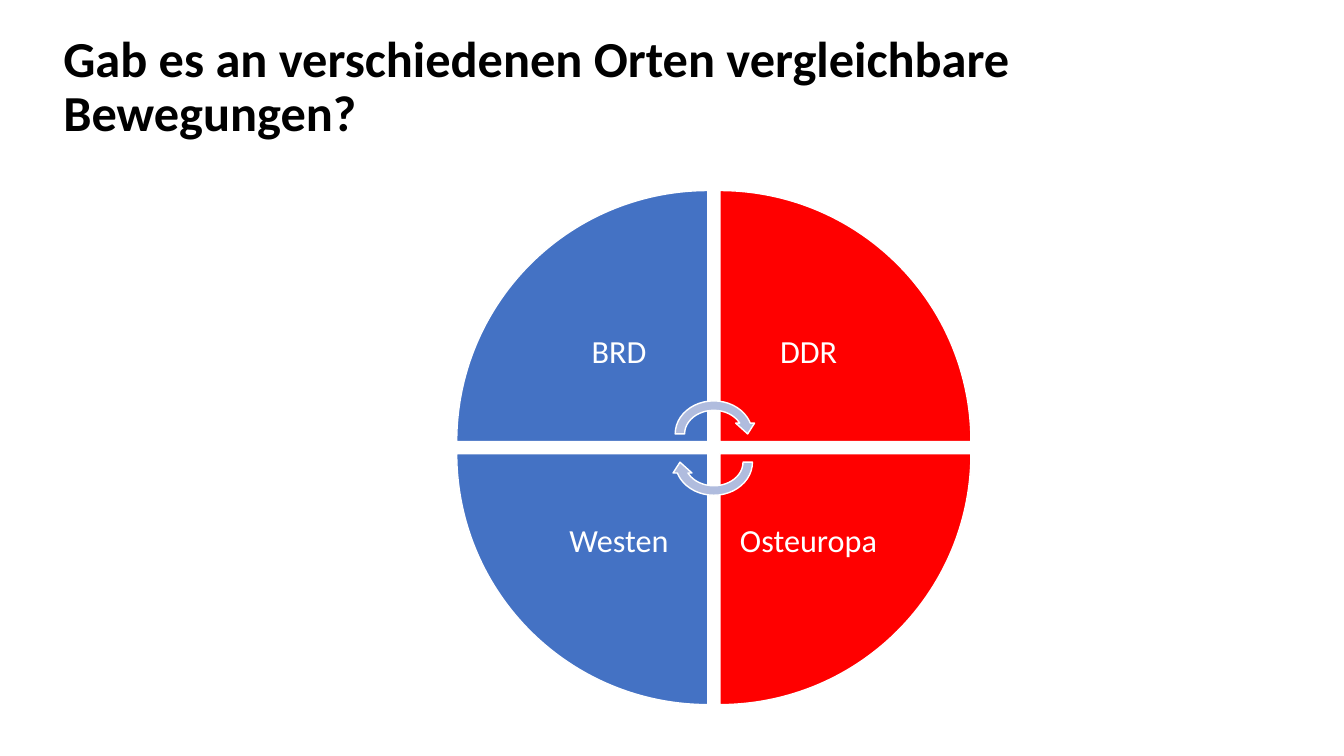
from dataclasses import dataclass

from pptx import Presentation
from pptx.dml.color import RGBColor
from pptx.enum.shapes import MSO_SHAPE as Preset
from pptx.enum.text import MSO_ANCHOR as Anchor, PP_ALIGN as Align
from pptx.util import Inches, Pt

# Content: label, column, row, rotation, colour name
TITLE = "Gab es an verschiedenen Orten vergleichbare Bewegungen?"
QUADRANTS = [
    ("BRD", 0, 0, 0, "west"),
    ("DDR", 1, 0, 90, "east"),
    ("Osteuropa", 1, 1, 180, "east"),
    ("Westen", 0, 1, 270, "west"),
]
ARROWS = [(3.93, 0), (4.21, 180)]  # top, rotation


@dataclass(frozen=True)
class Theme:
    font: str = "Calibri"
    title_size: int = 36
    label_size: int = 23
    west: str = "4472C4"
    east: str = "FF0000"
    arrow: str = "B0BCDE"
    white: str = "FFFFFF"
    black: str = "000000"


THEME = Theme()

# Layout in inches
WHEEL_LEFT, WHEEL_TOP = 4.53, 1.89
WEDGE, PITCH = 2.49, 2.61
LABEL = 1.76
ARROW_LEFT, ARROW_WIDTH, ARROW_HEIGHT = 6.65, 0.86, 0.75


def add_part(slide, preset, box, rotation, fill):
    shape = slide.shapes.add_shape(preset, *map(Inches, box))
    shape.rotation = rotation
    shape.shadow.inherit = False
    shape.fill.solid()
    shape.fill.fore_color.rgb = RGBColor.from_string(fill)
    shape.line.color.rgb = RGBColor.from_string(THEME.white)
    shape.line.width = Pt(1)


def add_text(slide, text, box, size, color, align, insets, bold=False):
    frame = slide.shapes.add_textbox(*map(Inches, box)).text_frame
    frame.word_wrap = True
    frame.vertical_anchor = Anchor.MIDDLE
    frame.margin_left = frame.margin_right = Inches(insets[0])
    frame.margin_top = frame.margin_bottom = Inches(insets[1])
    paragraph = frame.paragraphs[0]
    paragraph.text = text
    paragraph.alignment = align
    paragraph.line_spacing = 0.9
    font = paragraph.font
    font.name, font.size, font.bold = THEME.font, Pt(size), bold
    font.color.rgb = RGBColor.from_string(color)


def main():
    presentation = Presentation()
    presentation.slide_width, presentation.slide_height = Inches(13.33), Inches(7.5)
    slide = presentation.slides.add_slide(presentation.slide_layouts[6])

    # Wheel: each label sits at the inner corner of its wedge
    for label, column, row, rotation, side in QUADRANTS:
        left = WHEEL_LEFT + column * PITCH
        top = WHEEL_TOP + row * PITCH
        add_part(slide, Preset.PIE_WEDGE, (left, top, WEDGE, WEDGE),
                 rotation, getattr(THEME, side))
        label_left = left + (1 - column) * (WEDGE - LABEL)
        label_top = top + (1 - row) * (WEDGE - LABEL)
        add_text(slide, label, (label_left, label_top, LABEL, LABEL),
                 THEME.label_size, THEME.white, Align.CENTER, (0.18, 0.18))

    # Arrows around the hub
    for top, rotation in ARROWS:
        add_part(slide, Preset.CIRCULAR_ARROW,
                 (ARROW_LEFT, top, ARROW_WIDTH, ARROW_HEIGHT), rotation, THEME.arrow)

    # Title
    add_text(slide, TITLE, (0.53, 0.4, 12.5, 0.95), THEME.title_size,
             THEME.black, Align.LEFT, (0.1, 0.05), bold=True)

    presentation.save("out.pptx")


if __name__ == "__main__":
    main()
